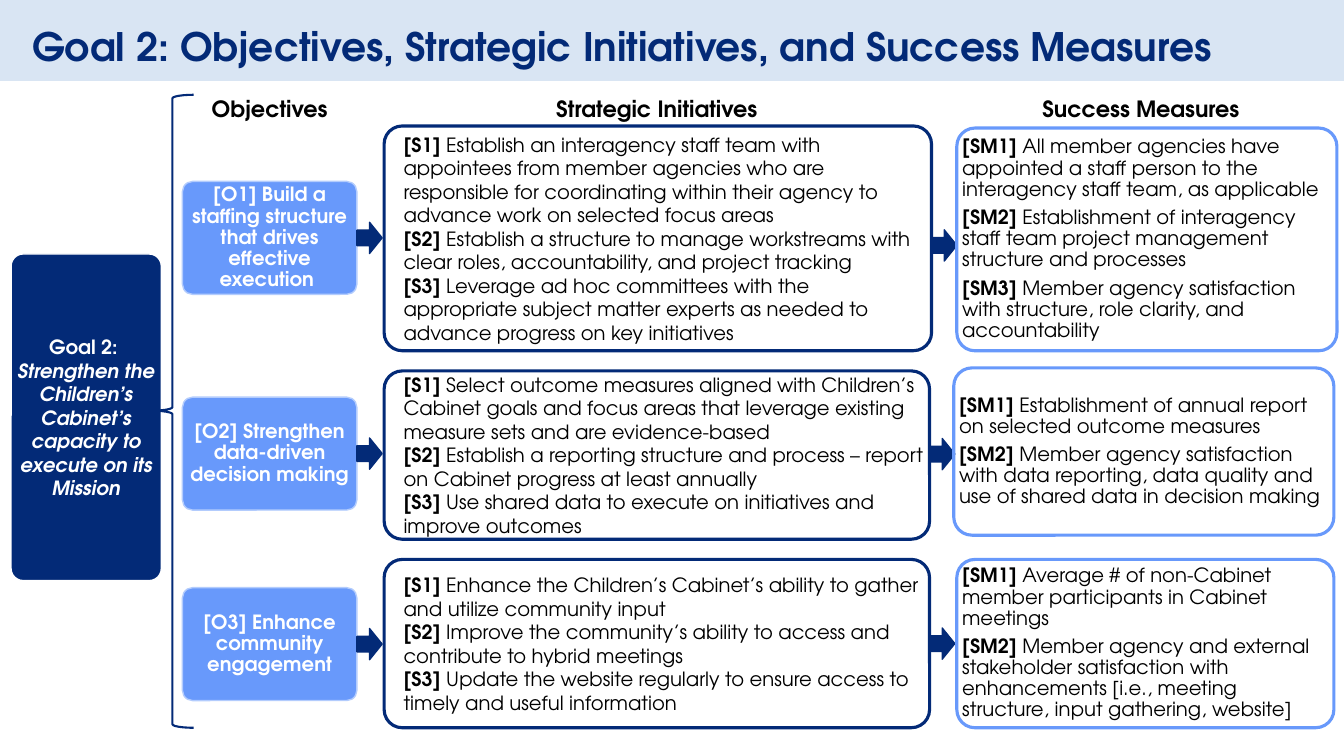
"""Build the Goal 2 slide linking objectives, strategic initiatives and success measures."""
from pptx import Presentation
from pptx.dml.color import RGBColor
from pptx.enum.shapes import MSO_SHAPE
from pptx.enum.text import MSO_ANCHOR, PP_ALIGN
from pptx.util import Inches, Pt

FONT = "TeX Gyre Adventor"
NAVY, BLUE, PALE_BLUE, BAND = "032A77", "6899FB", "B3CCFD", "D9E5F3"
BLACK, WHITE = "000000", "FFFFFF"
SLIDE_WIDTH, SLIDE_HEIGHT = 13.33, 7.5
OBJECTIVE_LEFT, OBJECTIVE_WIDTH, OBJECTIVE_HEIGHT = 1.81, 1.73, 1.12
INITIATIVE_LEFT = 3.81
ARROW_WIDTH, ARROW_HEIGHT = 0.25, 0.31
ARROW_DROP = (OBJECTIVE_HEIGHT - ARROW_HEIGHT) / 2
CORNER = 0.18

presentation = Presentation()
presentation.slide_width = Inches(SLIDE_WIDTH)
presentation.slide_height = Inches(SLIDE_HEIGHT)
slide = presentation.slides.add_slide(presentation.slide_layouts[6])


def add_box(kind, box, fill, line, line_width=1, radius=None):
    """Add a preset shape with its fill, outline and corner radius."""
    shape = slide.shapes.add_shape(kind, *[Inches(length) for length in box])
    shape.shadow.inherit = False
    if fill:
        shape.fill.solid()
        shape.fill.fore_color.rgb = RGBColor.from_string(fill)
    else:
        shape.fill.background()
    shape.line.color.rgb = RGBColor.from_string(line)
    shape.line.width = Pt(line_width)
    if radius:
        shape.adjustments[0] = radius / min(box[2:])
        frame = shape.text_frame
        margin = Inches(max(0, 0.05 - 0.29 * radius))
        frame.margin_left = frame.margin_right = margin
        frame.margin_top = frame.margin_bottom = margin
    return shape


def write(shape, paragraphs, color=BLACK, size=14, align=PP_ALIGN.LEFT,
          spacing=1.0, after=0, indent=0, anchor=MSO_ANCHOR.MIDDLE):
    """Write paragraphs, each a list of (text, bold, italic) runs."""
    frame = shape.text_frame
    frame.word_wrap = True
    frame.vertical_anchor = anchor
    for index, runs in enumerate(paragraphs):
        paragraph = frame.add_paragraph() if index else frame.paragraphs[0]
        if indent:
            properties = paragraph._p.get_or_add_pPr()
            properties.set("marL", str(Inches(indent)))
            properties.set("indent", "0")
        paragraph.alignment = align
        paragraph.line_spacing = spacing
        paragraph.space_after = Pt(after)
        for text, bold, italic in runs:
            run = paragraph.add_run()
            run.text = text
            run.font.name = FONT
            run.font.size = Pt(size)
            run.font.bold = bold
            run.font.italic = italic
            run.font.color.rgb = RGBColor.from_string(color)


add_box(MSO_SHAPE.RECTANGLE, (0, 0, SLIDE_WIDTH, 0.8), BAND, BAND)
title = slide.shapes.add_textbox(Inches(0.22), Inches(0.11), Inches(12.12), Inches(0.63))
write(title, [[("Goal 2: Objectives, Strategic Initiatives, and Success Measures", True, False)]],
      NAVY, 28, spacing=0.9, anchor=MSO_ANCHOR.BOTTOM)

headings = [
    ("Objectives", OBJECTIVE_LEFT, OBJECTIVE_WIDTH),
    ("Strategic Initiatives", INITIATIVE_LEFT, 5.41),
    ("Success Measures", 9.47, 3.69),
]
for text, left, width in headings:
    heading = slide.shapes.add_textbox(Inches(left), Inches(0.89), Inches(width), Inches(0.37))
    write(heading, [[(text, True, False)]], size=16, align=PP_ALIGN.CENTER, anchor=MSO_ANCHOR.TOP)

rows = [
    {
        "objective": "[O1] Build a staffing structure that drives effective execution ",
        "objective_top": 1.8,
        "initiative_box": (INITIATIVE_LEFT, 1.25, 5.43, 2.23),
        "initiatives": [
            ("[S1] ", "Establish an interagency staff team with appointees from member agencies who are "
             "responsible for coordinating within their agency to advance work on selected focus areas"),
            ("[S2] ", "Establish a structure to manage workstreams with clear roles, accountability, "
             "and project tracking"),
            ("[S3] ", "Leverage ad hoc committees with the appropriate subject matter experts as needed "
             "to advance progress on key initiatives"),
        ],
        "second_arrow_top": 2.28,
        "measure_box": (9.49, 1.27, 3.77, 2.21),
        "measures": [
            ("[SM1] ", "All member agencies have appointed a staff person to the interagency staff team, "
             "as applicable"),
            ("[SM2] ", "Establishment of interagency staff team project management structure and processes"),
            ("[SM3] ", "Member agency satisfaction with structure, role clarity, and accountability"),
        ],
    },
    {
        "objective": "[O2] Strengthen data-driven decision making",
        "objective_top": 3.94,
        "initiative_box": (INITIATIVE_LEFT, 3.68, 5.41, 1.67),
        "initiatives": [
            ("[S1] ", "Select outcome measures aligned with Children’s Cabinet goals and focus areas that "
             "leverage existing measure sets and are evidence-based"),
            ("[S2] ", "Establish a reporting structure and process – report on Cabinet progress at least "
             "annually"),
            ("[S3] ", "Use shared data to execute on initiatives and improve outcomes"),
        ],
        "second_arrow_top": 4.35,
        "measure_box": (9.46, 3.65, 3.77, 1.66),
        "measures": [
            ("[SM1] ", "Establishment of annual report on selected outcome measures"),
            ("[SM2] ", "Member agency satisfaction with data reporting, data quality and use of shared data "
             "in decision making"),
        ],
    },
    {
        "objective": "[O3] Enhance community engagement",
        "objective_top": 5.83,
        "initiative_box": (INITIATIVE_LEFT, 5.55, 5.41, 1.67),
        "initiatives": [
            ("[S1] ", "Enhance the Children’s Cabinet’s ability to gather and utilize community input"),
            ("[S2] ", "Improve the community’s ability to access and contribute to hybrid meetings"),
            ("[S3] ", "Update the website regularly to ensure access to timely and useful information"),
        ],
        "second_arrow_top": 6.23,
        "measure_box": (9.49, 5.55, 3.74, 1.67),
        "measures": [
            ("[SM1] ", "Average # of non-Cabinet member participants in Cabinet meetings"),
            ("[SM2] ", "Member agency and external stakeholder satisfaction with enhancements "
             "[i.e., meeting structure, input gathering, website]"),
        ],
    },
]
for row in rows:
    top = row["objective_top"]
    objective = add_box(MSO_SHAPE.ROUNDED_RECTANGLE,
                        (OBJECTIVE_LEFT, top, OBJECTIVE_WIDTH, OBJECTIVE_HEIGHT),
                        BLUE, PALE_BLUE, radius=0.1)
    write(objective, [[(row["objective"], True, False)]], WHITE,
          align=PP_ALIGN.CENTER, spacing=0.9, after=5)

    initiative_left, _, initiative_width, _ = row["initiative_box"]
    arrows = [
        (OBJECTIVE_LEFT + OBJECTIVE_WIDTH, top + ARROW_DROP),
        (initiative_left + initiative_width, row["second_arrow_top"]),
    ]
    for arrow_left, arrow_top in arrows:
        add_box(MSO_SHAPE.RIGHT_ARROW, (arrow_left, arrow_top, ARROW_WIDTH, ARROW_HEIGHT), NAVY, NAVY)

    panels = [
        ("initiative_box", "initiatives", NAVY, {"indent": 0.14}),
        ("measure_box", "measures", BLUE, {"spacing": 0.9, "after": 5}),
    ]
    for box, items, outline, layout in panels:
        panel = add_box(MSO_SHAPE.ROUNDED_RECTANGLE, row[box], None, outline, 2.25, CORNER)
        write(panel, [[(label, True, False), (text, False, False)] for label, text in row[items]], **layout)

goal = add_box(MSO_SHAPE.ROUNDED_RECTANGLE, (0.11, 2.52, 1.49, 3.24), NAVY, WHITE, radius=0.12)
write(goal, [
    [("Goal 2: ", True, False)],
    [("Strengthen the Children’s Cabinet’s capacity to execute on its Mission", True, True)],
], WHITE, align=PP_ALIGN.CENTER)

brace = add_box(MSO_SHAPE.RIGHT_BRACE, (1.5, 0.94, 0.42, 6.28), None, NAVY, 1.5)
brace.rotation = 180
brace.adjustments[0] = 0.083
brace.adjustments[1] = 0.501

presentation.save("out.pptx")
